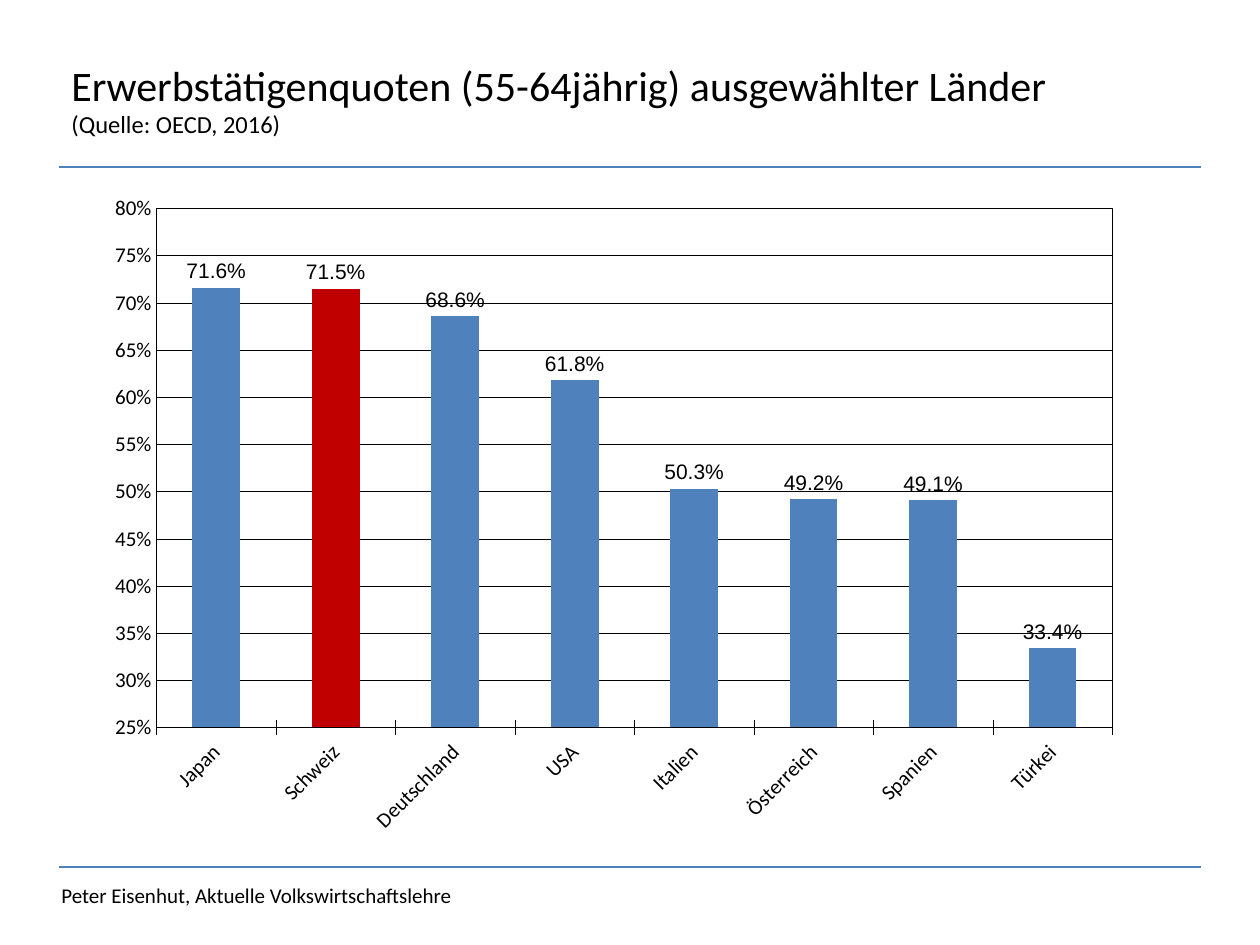
from pptx import Presentation, util as u
from pptx.chart.data import CategoryChartData
from pptx.dml.color import RGBColor
from pptx.enum import chart as charts, shapes, text
from pptx.oxml import parse_xml
from pptx.oxml.ns import nsdecls, qn

BLACK = RGBColor(0x00, 0x00, 0x00)
BLUE = RGBColor(0x4F, 0x81, 0xBD)
RED = RGBColor(0xC0, 0x00, 0x00)

PX = u.Inches(1) / 126

EMPLOYMENT_RATES = {
    "Japan": 0.716,
    "Schweiz": 0.715,
    "Deutschland": 0.686,
    "USA": 0.618,
    "Italien": 0.503,
    "Österreich": 0.492,
    "Spanien": 0.491,
    "Türkei": 0.334,
}


def px(*lengths):
    return [round(length * PX) for length in lengths]


class Page:
    body_font = "Calibri"
    label_font = "Arial"
    small = u.Pt(12)
    hairline = u.Pt(0.25)

    def __init__(self, deck):
        self.slide = deck.slides.add_slide(deck.slide_layouts[6])

    def style_font(self, font, name, size):
        font.name, font.size = name, size
        font.color.rgb = BLACK

    def rule(self, y):
        """Draw a horizontal line across the page."""
        line = self.slide.shapes.add_connector(
            shapes.MSO_CONNECTOR.STRAIGHT, *px(59, y, 1201, y))
        line.line.color.rgb = BLUE
        line.line.width = u.Pt(1.25)
        line._element.spPr.append(parse_xml(f"<a:effectLst {nsdecls('a')}/>"))

    def text(self, left, top, width, height, lines, anchor):
        """Add one paragraph of (wording, points) lines split by line breaks."""
        box = self.slide.shapes.add_textbox(*px(left, top, width, height))
        frame = box.text_frame
        frame.word_wrap = True
        frame.vertical_anchor = anchor
        frame.text = "\v".join(wording for wording, _ in lines)
        for span, (_, points) in zip(frame.paragraphs[0].runs, lines):
            self.style_font(span.font, self.body_font, u.Pt(points))

    def style_axis(self, axis, tick):
        axis.major_tick_mark = tick
        axis.minor_tick_mark = charts.XL_TICK_MARK.NONE
        axis.format.line.color.rgb = BLACK
        axis.format.line.width = self.hairline
        self.style_font(axis.tick_labels.font, self.body_font, self.small)

    def place_plot(self, chart, x, y, w, h):
        """Fix the inner plot area, in shares of the chart, and frame it."""
        area = chart._chartSpace.chart.plotArea
        for layout in area.findall(qn("c:layout")):
            area.remove(layout)
        area.insert(0, parse_xml(
            f"<c:layout {nsdecls('c')}><c:manualLayout>"
            '<c:layoutTarget val="inner"/>'
            '<c:xMode val="edge"/><c:yMode val="edge"/>'
            f'<c:x val="{x}"/><c:y val="{y}"/><c:w val="{w}"/><c:h val="{h}"/>'
            "</c:manualLayout></c:layout>"))
        area.append(parse_xml(
            f"<c:spPr {nsdecls('c', 'a')}><a:noFill/>"
            f'<a:ln w="{self.hairline}"><a:solidFill>'
            f'<a:srgbClr val="{BLACK}"/></a:solidFill></a:ln></c:spPr>'))

    def column_chart(self, left, top, width, height, rates, highlight):
        data = CategoryChartData(number_format="0.0%")
        data.categories = list(rates)
        data.add_series("Erwerbstätigenquote", rates.values())
        chart = self.slide.shapes.add_chart(
            charts.XL_CHART_TYPE.COLUMN_CLUSTERED,
            *px(left, top, width, height), data).chart
        chart.has_legend = chart.has_title = False
        self.style_font(chart.font, self.label_font, self.small)

        countries, values = chart.category_axis, chart.value_axis
        self.style_axis(countries, charts.XL_TICK_MARK.CROSS)
        countries._element.txPr.find(qn("a:bodyPr")).set("rot", "-2700000")
        self.style_axis(values, charts.XL_TICK_MARK.INSIDE)
        values.minimum_scale, values.maximum_scale = 0.25, 0.8
        values.major_unit = 0.05
        values.tick_labels.number_format = "0%"
        values.tick_labels.number_format_is_linked = False
        values.major_gridlines.format.line.color.rgb = BLACK
        values.major_gridlines.format.line.width = self.hairline

        plot = chart.plots[0]
        plot.gap_width = 150
        plot.vary_by_categories = False
        series = plot.series[0]
        bars = [series, series.points[list(rates).index(highlight)]]
        for bar, color in zip(bars, (BLUE, RED)):
            bar.format.fill.solid()
            bar.format.fill.fore_color.rgb = color
        labels = series.data_labels
        labels.show_value = True
        labels.number_format = "0.0%"
        labels.number_format_is_linked = False
        labels.position = charts.XL_LABEL_POSITION.OUTSIDE_END
        self.style_font(labels.font, self.label_font, self.small)
        self.place_plot(chart, 0.081, 0.047, 0.837, 0.727)


def main():
    deck = Presentation()
    deck.slide_width, deck.slide_height = px(1260, 945)
    page = Page(deck)
    for y in (167, 867):
        page.rule(y)
    page.text(49, 876, 759, 38,
              [("Peter Eisenhut, Aktuelle Volkswirtschaftslehre", 12)],
              text.MSO_ANCHOR.TOP)
    page.text(59, 20, 1157, 158,
              [("Erwerbstätigenquoten (55-64jährig) ausgewählter Länder ", 24),
               ("(Quelle: OECD, 2016)", 14)],
              text.MSO_ANCHOR.MIDDLE)
    page.column_chart(64, 175, 1142, 714, EMPLOYMENT_RATES, "Schweiz")
    deck.save("out.pptx")


if __name__ == "__main__":
    main()
